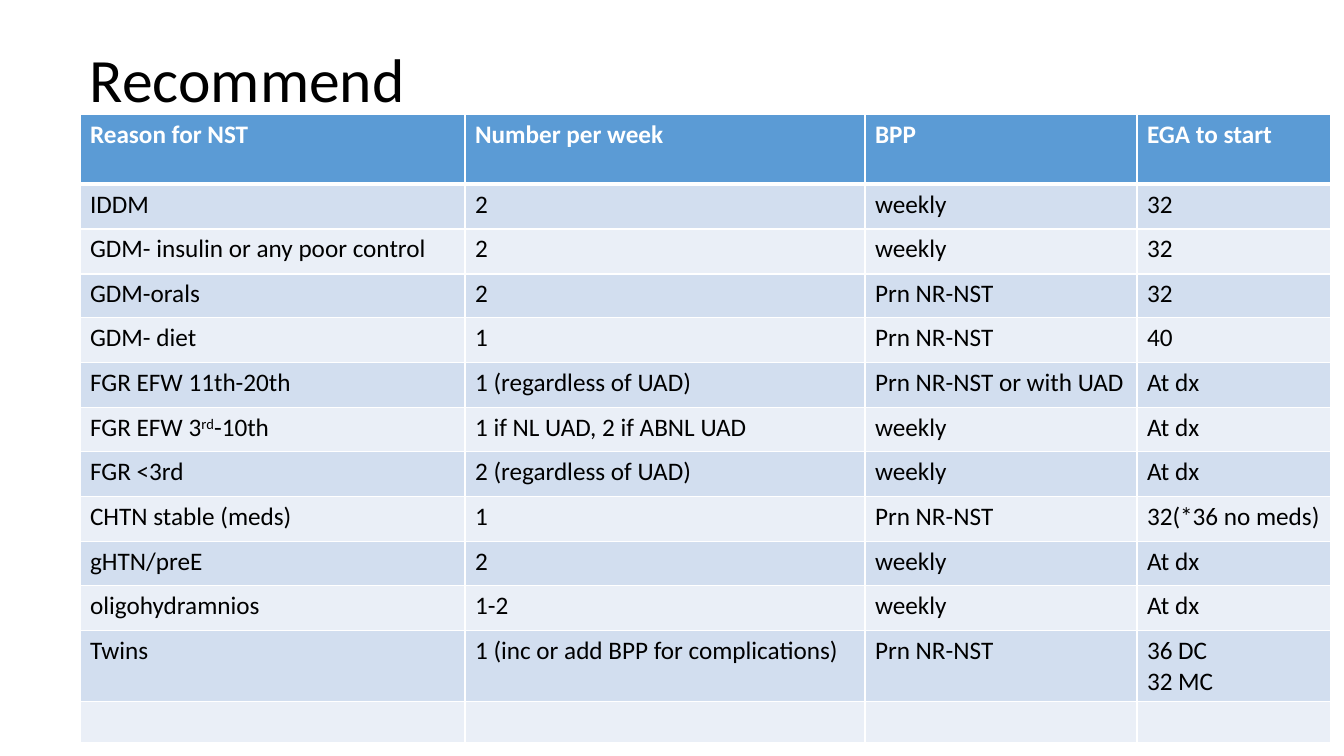
import pptx
import pptx.dml.color
import pptx.enum.text
import pptx.oxml
import pptx.oxml.ns
import pptx.util
from lxml import etree

SCALE = 914400 / 100.8  # EMU in one px
FONT = "Calibri"
BLACK, WHITE = "000000", "FFFFFF"
HEAD, DARK, LIGHT = "5B9BD5", "D2DEEF", "EAEFF7"

COLS = [385, 400, 272, 194]
TALLS = [70] + [45, 45, 44] * 3 + [45, 71, 41]
# "\n" parts paragraphs, "^" encloses superscript
ROWS = [
    ["Reason for NST", "Number per week", "BPP", "EGA to start"],
    ["IDDM", "2", "weekly", "32"],
    ["GDM- insulin or any poor control", "2", "weekly", "32"],
    ["GDM-orals", "2", "Prn NR-NST", "32"],
    ["GDM- diet", "1", "Prn NR-NST", "40"],
    ["FGR EFW 11th-20th", "1 (regardless of UAD)", "Prn NR-NST or with UAD", "At dx"],
    ["FGR EFW 3^rd^-10th", "1 if NL UAD, 2 if ABNL UAD", "weekly", "At dx"],
    ["FGR <3rd", "2 (regardless of UAD)", "weekly", "At dx"],
    ["CHTN stable (meds)", "1", "Prn NR-NST", "32(*36 no meds)"],
    ["gHTN/preE", "2", "weekly", "At dx"],
    ["oligohydramnios", "1-2", "weekly", "At dx"],
    ["Twins", "1 (inc or add BPP for complications)", "Prn NR-NST", "36 DC\n32 MC"],
    ["", "", "", ""],
]


def px(n):
    return pptx.util.Emu(round(n * SCALE))


def color(code):
    return pptx.dml.color.RGBColor.from_string(code)


def add_run(para, text, size, tint, bold=False, raised=False):
    run = para.add_run()
    run.text = text
    font = run.font
    font.name, font.size, font.bold = FONT, pptx.util.Pt(size), bold
    font.color.rgb = color(tint)
    if raised:
        run._r.get_or_add_rPr().set("baseline", "30000")


def write(frame, text, size, tint, bold=False):
    for i, line in enumerate(text.split("\n")):
        para = frame.add_paragraph() if i else frame.paragraphs[0]
        for j, part in enumerate(line.split("^")):
            if part:
                add_run(para, part, size, tint, bold, j % 2 == 1)


def add_edges(cell, base):
    props = cell._tc.get_or_add_tcPr()
    widths = {"lnL": 1, "lnR": 1, "lnT": 1, "lnB": base}
    for i, (side, width) in enumerate(widths.items()):
        line = etree.Element(pptx.oxml.ns.qn("a:" + side), w=str(pptx.util.Pt(width)))
        fill = etree.SubElement(line, pptx.oxml.ns.qn("a:solidFill"))
        etree.SubElement(fill, pptx.oxml.ns.qn("a:srgbClr"), val=WHITE)
        props.insert(i, line)


def add_title(slide, x, y, w, h):
    box = slide.shapes.add_textbox(px(x), px(y), px(w), px(h))
    frame = box.text_frame
    frame.word_wrap = True
    frame.vertical_anchor = pptx.enum.text.MSO_ANCHOR.MIDDLE
    frame.paragraphs[0].line_spacing = 0.9
    write(frame, "Recommend", 44, BLACK)


def add_grid(slide, x, y):
    shape = slide.shapes.add_table(
        len(ROWS), len(COLS), px(x), px(y), px(sum(COLS)), px(sum(TALLS)))
    table = shape.table
    for col, wide in zip(table.columns, COLS):
        col.width = px(wide)
    for r, (row, tall) in enumerate(zip(ROWS, TALLS)):
        table.rows[r].height = px(tall)
        head = r == 0
        shade = HEAD if head else DARK if r % 2 else LIGHT
        for c, text in enumerate(row):
            cell = table.cell(r, c)
            cell.fill.solid()
            cell.fill.fore_color.rgb = color(shade)
            add_edges(cell, 3 if head else 1)
            write(cell.text_frame, text, 18, WHITE if head else BLACK, head)
    # The thick rule under the header is shared with the first body row
    for cell in table.rows[1].cells:
        top = cell._tc.tcPr.find(pptx.oxml.ns.qn("a:lnT"))
        top.set("w", str(pptx.util.Pt(3)))


def main():
    deck = pptx.Presentation()
    deck.slide_width, deck.slide_height = px(1344), px(756)
    slide = deck.slides.add_slide(deck.slide_layouts[6])
    add_title(slide, 80, 10, 1159, 146)
    add_grid(slide, 80, 114)
    deck.save("out.pptx")


if __name__ == "__main__":
    main()
